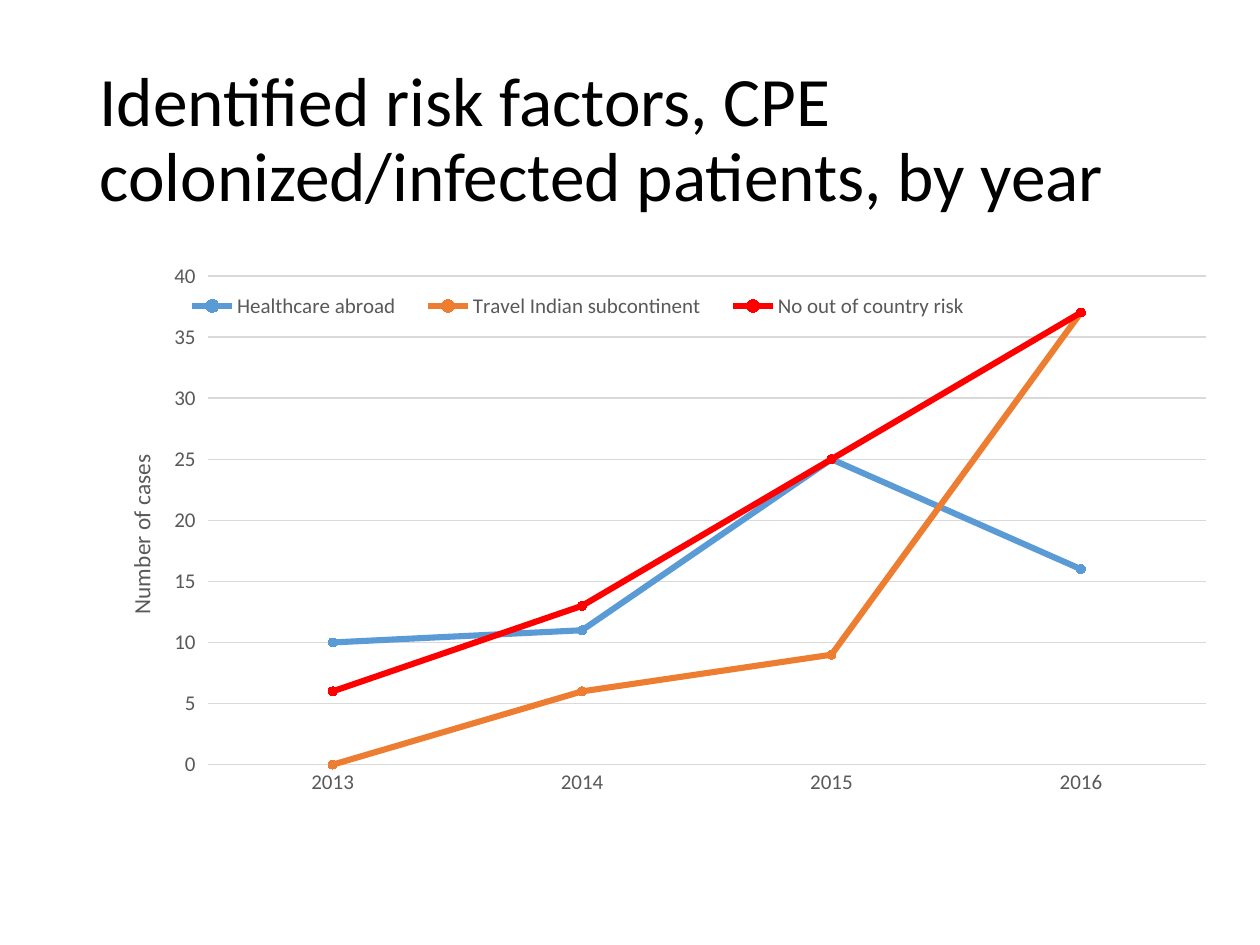
from dataclasses import dataclass

from lxml import etree
from pptx import Presentation
from pptx.chart.data import CategoryChartData
from pptx.dml.color import RGBColor
from pptx.enum.chart import XL_CHART_TYPE, XL_LEGEND_POSITION, XL_MARKER_STYLE, XL_TICK_MARK
from pptx.enum.text import MSO_ANCHOR, MSO_AUTO_SIZE, PP_ALIGN
from pptx.oxml.ns import qn
from pptx.util import Cm, Pt

LINE_CHART = XL_CHART_TYPE.LINE_MARKERS
LEGEND_BOTTOM = XL_LEGEND_POSITION.BOTTOM
CIRCLE = XL_MARKER_STYLE.CIRCLE
NO_TICK, TICK_OUT = XL_TICK_MARK.NONE, XL_TICK_MARK.OUTSIDE

FONT = "Calibri"
BLACK = RGBColor(0x00, 0x00, 0x00)
GREY = RGBColor(0x59, 0x59, 0x59)
LIGHT_GREY = RGBColor(0xD9, 0xD9, 0xD9)
BLUE = RGBColor(0x5B, 0x9B, 0xD5)
ORANGE = RGBColor(0xED, 0x7D, 0x31)
GOLD = RGBColor(0xFF, 0xC0, 0x00)
RED = RGBColor(0xFF, 0x00, 0x00)


@dataclass(frozen=True)
class RiskFactor:
    name: str
    cases: tuple[int, ...]
    line_color: RGBColor
    marker_color: RGBColor


YEARS = ("2013", "2014", "2015", "2016")
RISK_FACTORS = (
    RiskFactor("Healthcare abroad", (10, 11, 25, 16), BLUE, BLUE),
    RiskFactor("Travel Indian subcontinent", (0, 6, 9, 37), ORANGE, GOLD),
    RiskFactor("No out of country risk", (6, 13, 25, 37), RED, RED),
)


def style_font(font, size: float, color: RGBColor) -> None:
    font.name = FONT
    font.size = Pt(size)
    font.bold = False
    font.color.rgb = color


def style_rule(line) -> None:
    line.color.rgb = LIGHT_GREY
    line.width = Pt(0.75)


def place_part(part, index: int, inner: bool = False, **fractions: float) -> None:
    """Position a chart part by fractions of the chart's size."""
    for old_layout in part.findall(qn("c:layout")):
        part.remove(old_layout)
    layout = etree.Element(qn("c:layout"))
    manual = etree.SubElement(layout, qn("c:manualLayout"))
    if inner:
        etree.SubElement(manual, qn("c:layoutTarget")).set("val", "inner")
    for mode in ("xMode", "yMode"):
        etree.SubElement(manual, qn(f"c:{mode}")).set("val", "edge")
    for key, value in fractions.items():
        etree.SubElement(manual, qn(f"c:{key}")).set("val", str(value))
    part.insert(index, layout)


def add_title(slide, text: str) -> None:
    title = slide.shapes.title
    title.left, title.top, title.width, title.height = Cm(1.75), Cm(1.02), Cm(21.9), Cm(3.68)
    frame = title.text_frame
    frame.word_wrap = True
    frame.auto_size = MSO_AUTO_SIZE.NONE
    frame.vertical_anchor = MSO_ANCHOR.MIDDLE
    paragraph = frame.paragraphs[0]
    paragraph.alignment = PP_ALIGN.LEFT
    paragraph.line_spacing = 0.9
    run = paragraph.add_run()
    run.text = text
    style_font(run.font, 39.6, BLACK)


def style_series(series, factor: RiskFactor) -> None:
    series.smooth = False
    series.format.line.color.rgb = factor.line_color
    series.format.line.width = Pt(3.5)
    marker = series.marker
    marker.style = CIRCLE
    marker.size = 5
    marker.format.fill.solid()
    marker.format.fill.fore_color.rgb = factor.marker_color
    marker.format.line.color.rgb = factor.marker_color


def style_axes(chart) -> None:
    years, cases = chart.category_axis, chart.value_axis
    for axis, tick in ((years, NO_TICK), (cases, TICK_OUT)):
        axis.major_tick_mark = tick
        axis.minor_tick_mark = NO_TICK
        style_font(axis.tick_labels.font, 12, GREY)
    style_rule(years.format.line)
    cases.format.line.fill.background()
    cases.minimum_scale, cases.maximum_scale, cases.major_unit = 0, 40, 5
    cases.has_major_gridlines = True
    style_rule(cases.major_gridlines.format.line)

    run = cases.axis_title.text_frame.paragraphs[0].add_run()
    run.text = "Number of cases"
    style_font(run.font, 13.3, GREY)
    place_part(cases.axis_title._element, 1, x=0.03, y=0.33)


def add_case_chart(slide) -> None:
    data = CategoryChartData()
    data.categories = YEARS
    for factor in RISK_FACTORS:
        data.add_series(factor.name, factor.cases)
    chart = slide.shapes.add_chart(
        LINE_CHART, Cm(1.75), Cm(5.08), Cm(23.04), Cm(12.09), data
    ).chart
    style_font(chart.font, 10, BLACK)
    chart.has_title = False
    plot = chart.plots[0]
    plot.vary_by_categories = False
    for series, factor in zip(plot.series, RISK_FACTORS):
        style_series(series, factor)
    style_axes(chart)

    # Legend lies over the top of the plot
    chart.has_legend = True
    legend = chart.legend
    legend.position = LEGEND_BOTTOM
    legend.include_in_layout = True
    style_font(legend.font, 12, GREY)
    place_part(legend._element, 1, x=0.07, y=0.06, w=0.72, h=0.06)
    plot_area = chart._chartSpace.chart.plotArea
    place_part(plot_area, 0, inner=True, x=0.106, y=0.04, w=0.873, h=0.815)


def main() -> None:
    deck = Presentation()
    deck.slide_width, deck.slide_height = Cm(25.4), Cm(19.05)
    slide = deck.slides.add_slide(deck.slide_layouts[5])
    add_title(slide, "Identified risk factors, CPE colonized/infected patients, by year")
    add_case_chart(slide)
    deck.save("out.pptx")


if __name__ == "__main__":
    main()
